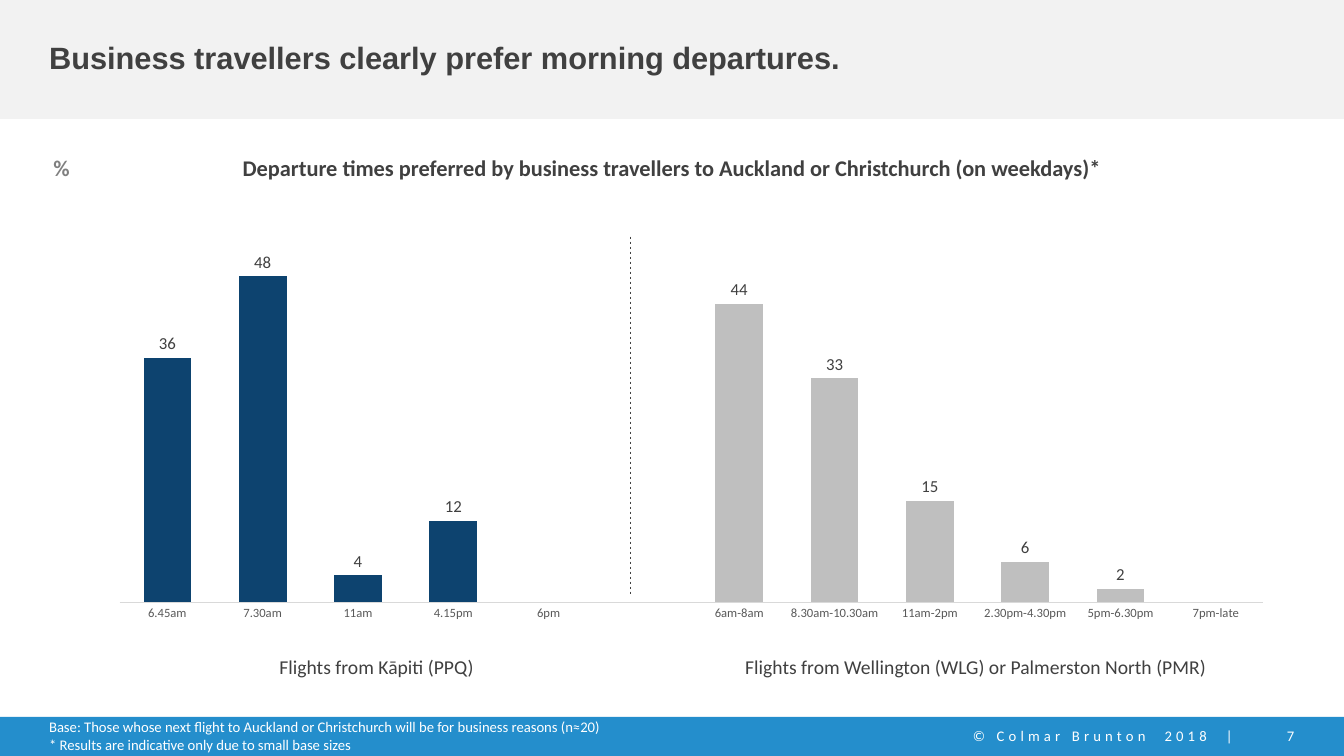
from lxml.etree import SubElement
from pptx import Presentation
from pptx.chart.data import CategoryChartData
from pptx.dml.color import RGBColor
from pptx.enum.chart import XL_CHART_TYPE, XL_LABEL_POSITION, XL_TICK_MARK
from pptx.enum.dml import MSO_LINE
from pptx.enum.shapes import MSO_CONNECTOR, MSO_SHAPE
from pptx.enum.text import MSO_ANCHOR, PP_ALIGN
from pptx.oxml.ns import qn
from pptx.util import Pt

WHITE = RGBColor(0xFF, 0xFF, 0xFF)
BLACK = RGBColor(0, 0, 0)
PALE_GREY = RGBColor(0xF2, 0xF2, 0xF2)
AXIS_GREY = RGBColor(0xD9, 0xD9, 0xD9)
BAR_GREY = RGBColor(0xBF, 0xBF, 0xBF)
MID_GREY = RGBColor(0x80, 0x80, 0x80)
LABEL_GREY = RGBColor(0x59, 0x59, 0x59)
DARK_GREY = RGBColor(0x40, 0x40, 0x40)
NAVY = RGBColor(0x0D, 0x43, 0x6F)
BLUE = RGBColor(0x24, 0x8E, 0xCC)

SLIDE_WIDTH, SLIDE_HEIGHT = 960, 540
MARGIN = 28

# Departure times run from early to late
KAPITI_TIMES = [("6.45am", 36), ("7.30am", 48), ("11am", 4), ("4.15pm", 12), ("6pm", None)]
OTHER_TIMES = [("6am-8am", 44), ("8.30am-10.30am", 33), ("11am-2pm", 15),
               ("2.30pm-4.30pm", 6), ("5pm-6.30pm", 2), ("7pm-late", None)]


def set_font(font, size, color, bold=False, name="Calibri"):
    font.name = name
    font.size = Pt(size)
    font.bold = bold
    font.color.rgb = color


def add_text(slide, box, lines, size, color=DARK_GREY, bold=False, name="Calibri",
             align=PP_ALIGN.LEFT, anchor=MSO_ANCHOR.TOP, line_spacing=None, tracking=0):
    """Place one paragraph per line; tracking is the letter spacing in points."""
    frame = slide.shapes.add_textbox(*map(Pt, box)).text_frame
    frame.word_wrap = True
    frame.vertical_anchor = anchor
    frame.text = "\n".join(lines)
    for paragraph in frame.paragraphs:
        paragraph.alignment = align
        if line_spacing:
            paragraph.line_spacing = line_spacing
        set_font(paragraph.font, size, color, bold, name)
        if tracking:
            for run in paragraph.runs:
                run._r.get_or_add_rPr().set("spc", str(tracking * 100))


def add_band(slide, box, color):
    band = slide.shapes.add_shape(MSO_SHAPE.RECTANGLE, *map(Pt, box))
    band.shadow.inherit = False
    band.fill.solid()
    band.fill.fore_color.rgb = color
    band.line.fill.background()


def add_header(slide, box):
    left, top, width, height = box
    add_band(slide, box, PALE_GREY)
    add_text(slide, (left + MARGIN, top, 774, height),
             ["Business travellers clearly prefer morning departures."], 22,
             bold=True, name="Arial", anchor=MSO_ANCHOR.MIDDLE, line_spacing=0.9)


def add_footer(slide, box):
    left, top, width, height = box
    add_band(slide, box, BLUE)
    text_top, text_height = top + 3.5, 20
    style = dict(size=10.5, color=WHITE, anchor=MSO_ANCHOR.MIDDLE)
    add_text(slide, (left + MARGIN, text_top, 645, text_height),
             ["Base: Those whose next flight to Auckland or Christchurch will be for "
              "business reasons (n≈20)",
              "* Results are indicative only due to small base sizes"], **style)
    for offset, text_width, text in ((682, 206, "© Colmar Brunton  2018  |"), (888.5, 43, "7")):
        add_text(slide, (left + offset, text_top, text_width, text_height), [text],
                 align=PP_ALIGN.RIGHT, tracking=3, **style)


def add_departure_chart(slide, box):
    bars = (KAPITI_TIMES + [("", None)] + OTHER_TIMES)[::-1]
    data = CategoryChartData(number_format="0")
    data.categories = [time for time, share in bars]
    data.add_series("Series 1", [share for time, share in bars])
    chart = slide.shapes.add_chart(XL_CHART_TYPE.COLUMN_CLUSTERED, *map(Pt, box), data).chart
    chart.has_legend = False
    chart.has_title = False
    set_font(chart.font, 10, BLACK)

    time_axis = chart.category_axis
    time_axis.reverse_order = True
    time_axis.major_tick_mark = XL_TICK_MARK.NONE
    time_axis.format.line.color.rgb = AXIS_GREY
    time_axis.format.line.width = Pt(0.75)
    set_font(time_axis.tick_labels.font, 9, LABEL_GREY)

    share_axis = chart.value_axis
    share_axis.visible = False
    share_axis.has_major_gridlines = False
    share_axis.minimum_scale, share_axis.maximum_scale = 0, 60

    plot = chart.plots[0]
    plot.gap_width = 100
    plot.vary_by_categories = False
    series = plot.series[0]
    series.format.fill.solid()
    series.format.fill.fore_color.rgb = BAR_GREY
    for index, bar in enumerate(bars):
        if bar in KAPITI_TIMES and bar[1] is not None:
            fill = series.points[index].format.fill
            fill.solid()
            fill.fore_color.rgb = NAVY
    labels = series.data_labels
    labels.show_value = True
    labels.position = XL_LABEL_POSITION.OUTSIDE_END
    set_font(labels.font, 12, DARK_GREY)


def add_divider(slide, x, top, bottom):
    divider = slide.shapes.add_connector(MSO_CONNECTOR.STRAIGHT, Pt(x), Pt(top), Pt(x), Pt(bottom))
    divider.line.color.rgb = DARK_GREY
    divider.line.width = Pt(0.5)
    divider.line.dash_style = MSO_LINE.DASH
    SubElement(divider._element.spPr, qn("a:effectLst"))


def add_departures(slide, box):
    """Place the chart with its heading, divider and group captions."""
    left, top, width, height = box
    heading = dict(size=16, bold=True, align=PP_ALIGN.CENTER)
    add_text(slide, (left, top, 32, 26.5), ["%"], color=MID_GREY, **heading)
    add_text(slide, (left + 52.5, top, 799, 26.5),
             ["Departure times preferred by business travellers to Auckland or "
              "Christchurch (on weekdays)*"], **heading)
    add_departure_chart(slide, (left + 40.5, top + 26.5, width - 40.5, 317))
    add_divider(slide, left + 422.5, top + 62.5, top + 318)
    captions = ((146, 190, "Flights from Kāpiti (PPQ)"),
                (470, 398, "Flights from Wellington (WLG) or Palmerston North (PMR)"))
    for offset, caption_width, caption in captions:
        add_text(slide, (left + offset, top + height - 24.5, caption_width, 24.5), [caption], 14,
                 align=PP_ALIGN.CENTER)


def main():
    presentation = Presentation()
    presentation.slide_width = Pt(SLIDE_WIDTH)
    presentation.slide_height = Pt(SLIDE_HEIGHT)
    slide = presentation.slides.add_slide(presentation.slide_layouts[6])
    add_header(slide, (0, 0, SLIDE_WIDTH, 85))
    add_footer(slide, (0, 512, SLIDE_WIDTH, 28))
    add_departures(slide, (MARGIN, 106.5, 891.5, 382.5))
    presentation.save("out.pptx")


if __name__ == "__main__":
    main()
